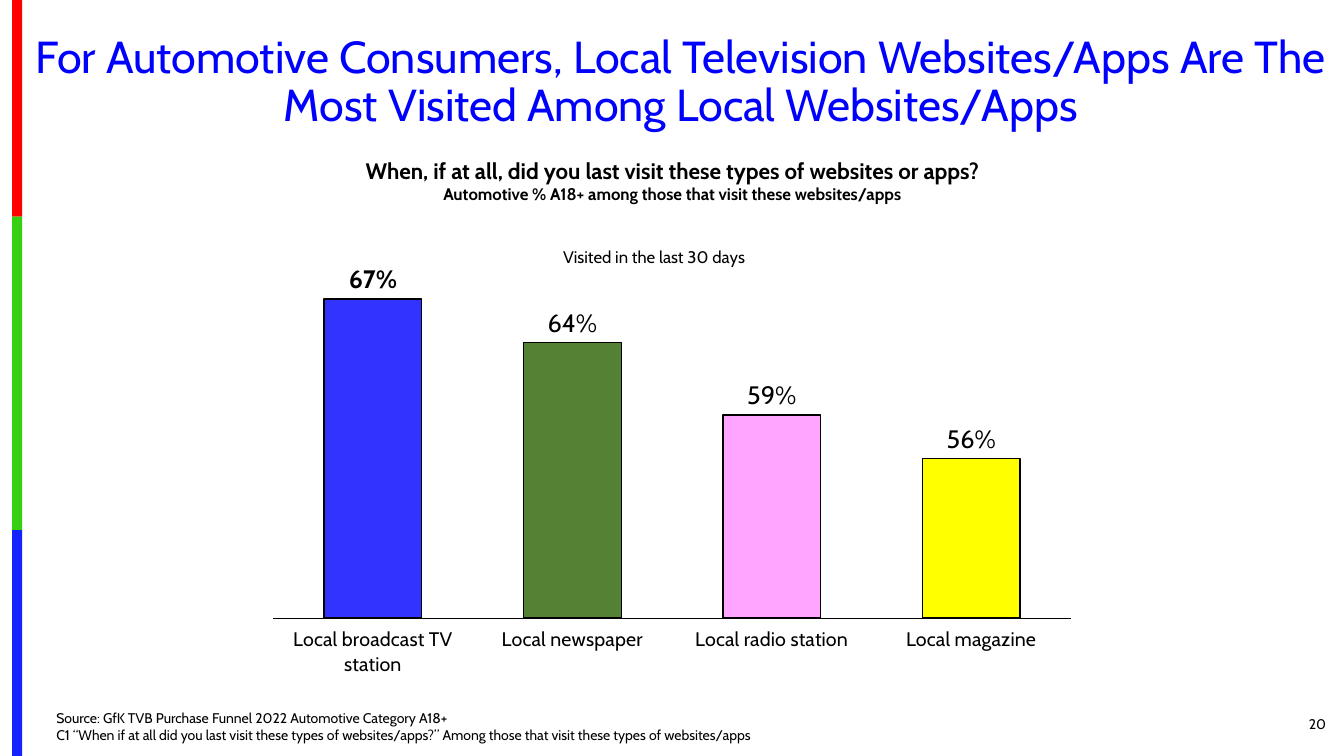
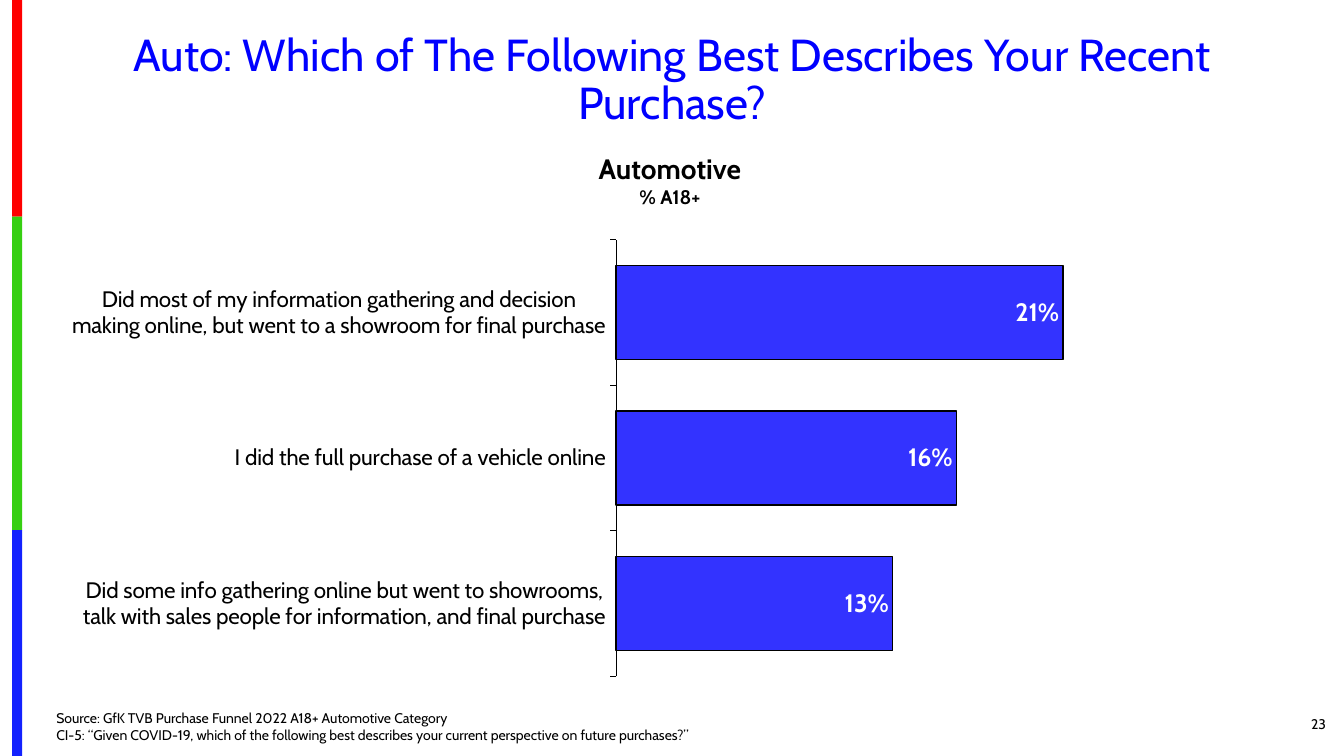
from lxml.etree import SubElement
from pptx import Presentation
from pptx.chart.data import CategoryChartData
from pptx.dml.color import RGBColor
from pptx.enum.chart import XL_CHART_TYPE, XL_LABEL_POSITION, XL_TICK_LABEL_POSITION, XL_TICK_MARK
from pptx.enum.shapes import MSO_SHAPE
from pptx.enum.text import MSO_ANCHOR, PP_ALIGN
from pptx.oxml.ns import qn
from pptx.util import Inches, Pt

FONT = "Cabin"
BLACK, WHITE, TITLE_BLUE, BAR_BLUE = "000000", "FFFFFF", "0000FF", "3333FF"
BANDS = [("FE0000", 2.15), ("36CF12", 3.11), ("1322FE", 2.24)]
BAND_LEFT, BAND_WIDTH = 0.12, 0.1
NUMBER_BOX = (12.17, 6.98, 1.08, 0.4)
SOURCE_BOX = (0.46, 6.98, 9.45, 0.44)

SLIDES = [
    {
        "title": "For Automotive Consumers, Local Television Websites/Apps Are The Most Visited Among Local Websites/Apps",
        "title_box": (0.17, 0.29, 13.17, 1.07),
        "heading": [
            ("When, if at all, did you last visit these types of websites or apps?", 16),
            ("Automotive % A18+ among those that visit these websites/apps", 12),
        ],
        "heading_box": (2.91, 1.51, 7.52, 0.57),
        "source": [
            "Source: GfK TVB Purchase Funnel 2022 Automotive Category A18+",
            "C1 “When if at all did you last visit these types of websites/apps?” Among those that visit these types of websites/apps",
        ],
        "number": "20",
        "chart": {
            "type": XL_CHART_TYPE.COLUMN_CLUSTERED,
            "box": (1.91, 2.27, 8.89, 4.44),
            "plot": (0.09, 0.06, 0.89, 0.81),
            "series": "Visited in the last 30 days",
            "title": "Visited in the last 30 days",
            "title_at": (0.41, 0.03),
            "values": {
                "Local broadcast TV station": 0.67,
                "Local newspaper": 0.64,
                "Local radio station": 0.59,
                "Local magazine": 0.56,
            },
            "point_colors": [BAR_BLUE, "548134", "FFA4FF", "FFFF00"],
            "scale": (0.45, 0.7),
            "gap": 104,
            "overlap": -27,
            "category_size": 14,
            "tick": XL_TICK_MARK.NONE,
            "reverse": False,
            "label": (BLACK, False, XL_LABEL_POSITION.OUTSIDE_END),
            "bold_points": [0],
        },
    },
    {
        "title": "Auto: Which of The Following Best Describes Your Recent Purchase?",
        "title_box": (0.46, 0.27, 12.42, 1.07),
        "heading": [("Automotive", 20), ("% A18+", 14)],
        "heading_box": (5.73, 1.45, 1.83, 0.67),
        "source": [
            "Source: GfK TVB Purchase Funnel 2022 A18+ Automotive Category",
            "CI-5: “Given COVID-19, which of the following best describes your current perspective on future purchases?”",
        ],
        "number": "23",
        "chart": {
            "type": XL_CHART_TYPE.BAR_CLUSTERED,
            "box": (0.71, 2.19, 12, 4.71),
            "plot": (0.45, 0.04, 0.44, 0.92),
            "series": "Series 1",
            "title": None,
            "values": {
                "Did most of my information gathering and decision making online, but went to a showroom for final purchase": 0.21,
                "I did the full purchase of a vehicle online": 0.16,
                "Did some info gathering online but went to showrooms, talk with sales people for information, and final purchase": 0.13,
            },
            "point_colors": [],
            "scale": (0, 0.25),
            "gap": 55,
            "overlap": 0,
            "category_size": 16,
            "tick": XL_TICK_MARK.OUTSIDE,
            "reverse": True,
            "label": (WHITE, True, XL_LABEL_POSITION.INSIDE_END),
            "bold_points": [],
        },
    },
]


def rgb(value):
    return RGBColor.from_string(value)


def inches(box):
    return [Inches(length) for length in box]


def style_font(font, size, color=BLACK, bold=False):
    font.name = FONT
    font.size = Pt(size)
    font.bold = bold
    font.color.rgb = rgb(color)


def fill_shape(target, color):
    target.fill.solid()
    target.fill.fore_color.rgb = rgb(color)


def add_text(slide, box, lines, color=BLACK, bold=False, align=PP_ALIGN.LEFT,
             anchor=MSO_ANCHOR.TOP, spacing=None):
    text_frame = slide.shapes.add_textbox(*inches(box)).text_frame
    text_frame.word_wrap = True
    text_frame.vertical_anchor = anchor
    text_frame.text = "\n".join(text for text, size in lines)
    for paragraph, (text, size) in zip(text_frame.paragraphs, lines):
        paragraph.alignment = align
        paragraph.line_spacing = spacing
        style_font(paragraph.runs[0].font, size, color, bold)


def add_bands(slide):
    top = 0
    for color, height in BANDS:
        box = inches((BAND_LEFT, top, BAND_WIDTH, height))
        band = slide.shapes.add_shape(MSO_SHAPE.RECTANGLE, *box)
        band.shadow.inherit = False
        fill_shape(band, color)
        band.line.fill.background()
        top += height


def set_layout(element, position, values, inner=False):
    for old_layout in element.findall(qn("c:layout")):
        element.remove(old_layout)
    layout = SubElement(element, qn("c:layout"))
    element.insert(position, layout)
    manual = SubElement(layout, qn("c:manualLayout"))
    settings = [("layoutTarget", "inner")] if inner else []
    settings += [("xMode", "edge"), ("yMode", "edge")]
    settings += zip("xywh", values)
    for name, value in settings:
        SubElement(manual, qn(f"c:{name}")).set("val", str(value))


def add_bar_chart(slide, content):
    data = CategoryChartData(number_format="0%")
    data.categories = list(content["values"])
    data.add_series(content["series"], list(content["values"].values()))
    chart = slide.shapes.add_chart(content["type"], *inches(content["box"]), data).chart
    style_font(chart.font, 10)
    chart.has_legend = False
    chart.has_title = bool(content["title"])
    if content["title"]:
        title = chart.chart_title
        title.text_frame.text = content["title"]
        style_font(title.text_frame.paragraphs[0].runs[0].font, 12)
        title.include_in_layout = False
        set_layout(title._element, 1, content["title_at"])

    value_axis = chart.value_axis
    value_axis.minimum_scale, value_axis.maximum_scale = content["scale"]
    value_axis.has_major_gridlines = False
    value_axis.visible = False
    category_axis = chart.category_axis
    category_axis.reverse_order = content["reverse"]
    category_axis.major_tick_mark = content["tick"]
    category_axis.minor_tick_mark = XL_TICK_MARK.NONE
    category_axis.tick_label_position = XL_TICK_LABEL_POSITION.LOW
    category_axis.format.line.color.rgb = rgb(BLACK)
    category_axis.format.line.width = Pt(0.75)
    style_font(category_axis.tick_labels.font, content["category_size"])

    plot = chart.plots[0]
    plot.vary_by_categories = False
    plot.gap_width = content["gap"]
    plot.overlap = content["overlap"]
    series = plot.series[0]
    series.invert_if_negative = False
    points = [series.points[index] for index in range(len(content["point_colors"]))]
    for target, color in zip([series] + points, [BAR_BLUE] + content["point_colors"]):
        fill_shape(target.format, color)
        target.format.line.color.rgb = rgb(BLACK)
        target.format.line.width = Pt(1)

    label_color, label_bold, label_position = content["label"]
    labels = series.data_labels
    labels.show_value = True
    labels.number_format = "0%"
    labels.number_format_is_linked = False
    labels.position = label_position
    style_font(labels.font, 18, label_color, label_bold)
    for index in content["bold_points"]:
        label = series.points[index].data_label
        style_font(label.font, 18, label_color, True)
        label.position = label_position
    plot_area = chart._chartSpace.find(qn("c:chart")).find(qn("c:plotArea"))
    set_layout(plot_area, 0, content["plot"], inner=True)


def build_slide(presentation, content):
    slide = presentation.slides.add_slide(presentation.slide_layouts[6])
    add_bands(slide)
    add_text(slide, content["title_box"], [(content["title"], 32)], TITLE_BLUE,
             align=PP_ALIGN.CENTER, anchor=MSO_ANCHOR.MIDDLE, spacing=0.9)
    add_text(slide, content["heading_box"], content["heading"], bold=True, align=PP_ALIGN.CENTER)
    add_bar_chart(slide, content["chart"])
    add_text(slide, SOURCE_BOX, [(line, 10) for line in content["source"]],
             anchor=MSO_ANCHOR.BOTTOM)
    add_text(slide, NUMBER_BOX, [(content["number"], 10)],
             align=PP_ALIGN.RIGHT, anchor=MSO_ANCHOR.MIDDLE)


def main():
    presentation = Presentation()
    presentation.slide_width = Inches(13.33)
    presentation.slide_height = Inches(7.5)
    for content in SLIDES:
        build_slide(presentation, content)
    presentation.save("out.pptx")


if __name__ == "__main__":
    main()
